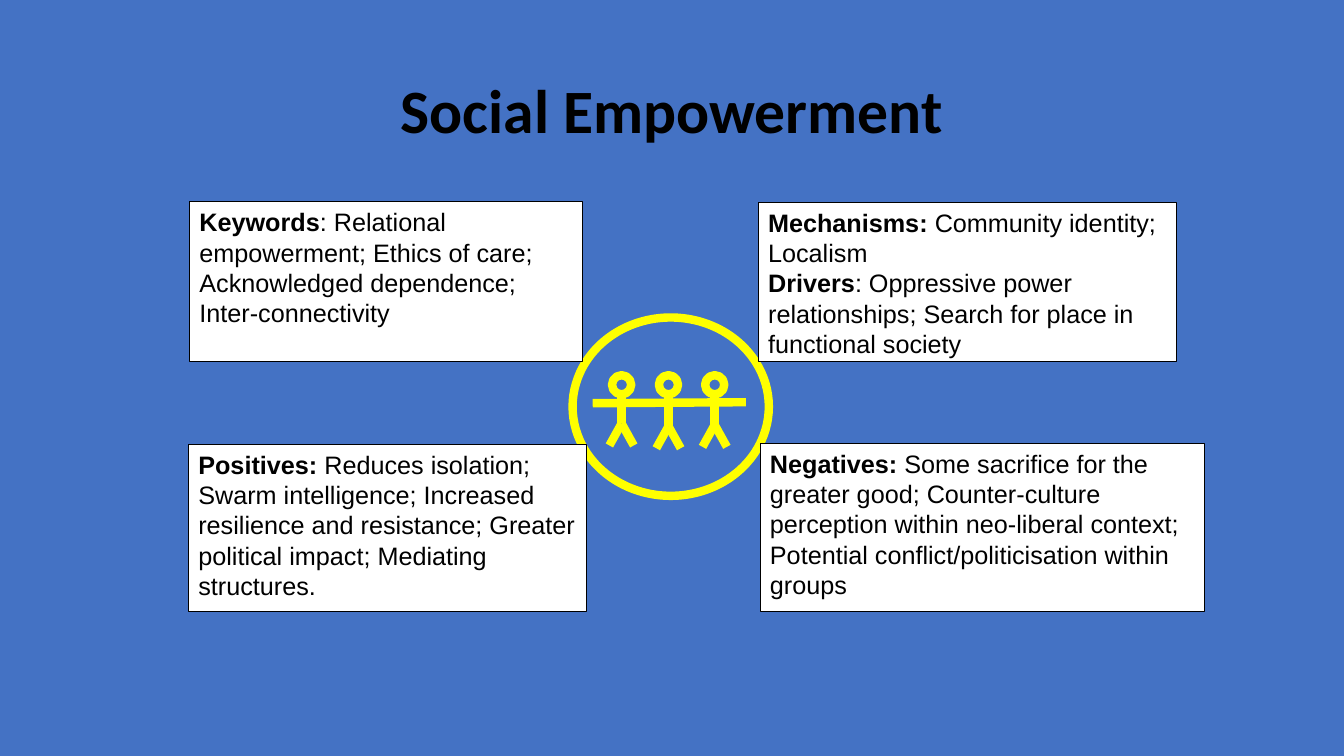
from lxml import etree
from pptx import Presentation
from pptx.dml.color import RGBColor
from pptx.enum.shapes import MSO_CONNECTOR as Connector, MSO_SHAPE as Shape
from pptx.enum.text import MSO_ANCHOR as Anchor, PP_ALIGN as Align
from pptx.oxml.ns import qn
from pptx.util import Pt

BLUE = RGBColor(0x44, 0x72, 0xC4)
YELLOW = RGBColor(0xFF, 0xFF, 0x00)
WHITE = RGBColor(0xFF, 0xFF, 0xFF)
BLACK = RGBColor(0x00, 0x00, 0x00)

# Left, top, width, height and (label, text) paragraphs
BOXES = [
    (135.4, 144, 280.8, 114.5, [
        ("Keywords", ": Relational empowerment; Ethics of care; "
                     "Acknowledged dependence; Inter-connectivity")]),
    (541.6, 144.4, 298.8, 113.8, [
        ("Mechanisms: ", "Community identity; Localism"),
        ("Drivers", ": Oppressive power relationships; "
                    "Search for place in functional society")]),
    (542.9, 316.6, 317.4, 120.4, [
        ("Negatives: ", "Some sacrifice for the greater good; Counter-culture "
                        "perception within neo-liberal context; "
                        "Potential conflict/politicisation within groups")]),
    (134.6, 317.4, 284.4, 119.5, [
        ("Positives: ", "Reduces isolation; Swarm intelligence; Increased "
                        "resilience and resistance; Greater political impact; "
                        "Mediating structures.")]),
]

# Centre line and hip height of each person
PEOPLE = [(444, 302.5), (477.5, 304.5), (510.5, 303.5)]


def add_run(paragraph, text, font="Arial", size=18, bold=False, color=BLACK):
    run = paragraph.add_run()
    run.text = text
    run.font.name = font
    run.font.size = Pt(size)
    run.font.bold = bold
    run.font.color.rgb = color


class SlideBuilder:
    def __init__(self, presentation, background, stroke, stroke_width):
        self.slide = presentation.slides.add_slide(presentation.slide_layouts[5])
        self.slide.background.fill.solid()
        self.slide.background.fill.fore_color.rgb = background
        self.stroke = stroke
        self.stroke_width = stroke_width

    def title(self, text, left, top, width, height):
        title = self.slide.shapes.title
        title.left, title.top = Pt(left), Pt(top)
        title.width, title.height = Pt(width), Pt(height)
        title.text_frame.vertical_anchor = Anchor.MIDDLE
        paragraph = title.text_frame.paragraphs[0]
        paragraph.alignment = Align.CENTER
        paragraph.line_spacing = 0.9
        add_run(paragraph, text, font="Calibri", size=44, bold=True)

    def shape(self, kind, left, top, width, height, line, line_width):
        shape = self.slide.shapes.add_shape(
            kind, Pt(left), Pt(top), Pt(width), Pt(height))
        shape.shadow.inherit = False
        shape.fill.background()
        shape.line.color.rgb = line
        shape.line.width = Pt(line_width)
        return shape

    def ring(self, left, top, width, height):
        self.shape(Shape.OVAL, left, top, width, height,
                   self.stroke, self.stroke_width)

    def box(self, left, top, width, height, entries):
        box = self.shape(Shape.RECTANGLE, left, top, width, height, BLACK, 0.5)
        box.fill.solid()
        box.fill.fore_color.rgb = WHITE
        frame = box.text_frame
        frame.word_wrap = True
        frame.vertical_anchor = Anchor.TOP
        for index, (label, text) in enumerate(entries):
            paragraph = frame.add_paragraph() if index else frame.paragraphs[0]
            paragraph.alignment = Align.LEFT
            add_run(paragraph, label, bold=True)
            add_run(paragraph, text)

    def line(self, x1, y1, x2, y2):
        line = self.slide.shapes.add_connector(
            Connector.STRAIGHT, Pt(x1), Pt(y1), Pt(x2), Pt(y2))
        line.line.color.rgb = self.stroke
        line.line.width = Pt(self.stroke_width)
        etree.SubElement(line._element.spPr, qn("a:effectLst"))

    def person(self, center, hip):
        self.ring(center - 6.85, 268, 13.7, 13.7)
        self.line(center, 282.5, center, hip)
        for step in (-8.7, 8.7):
            self.line(center, hip, center + step, hip + 15.7)


def main():
    presentation = Presentation()
    presentation.slide_width, presentation.slide_height = Pt(960), Pt(540)
    builder = SlideBuilder(presentation, BLUE, YELLOW, 6)
    builder.title("Social Empowerment", 66, 28.75, 828, 104.4)
    builder.ring(409, 226.8, 140.2, 127.4)
    for box in BOXES:
        builder.box(*box)
    for center, hip in PEOPLE:
        builder.person(center, hip)
    builder.line(532.8, 287.3, 423.4, 288)
    presentation.save("out.pptx")


if __name__ == "__main__":
    main()
